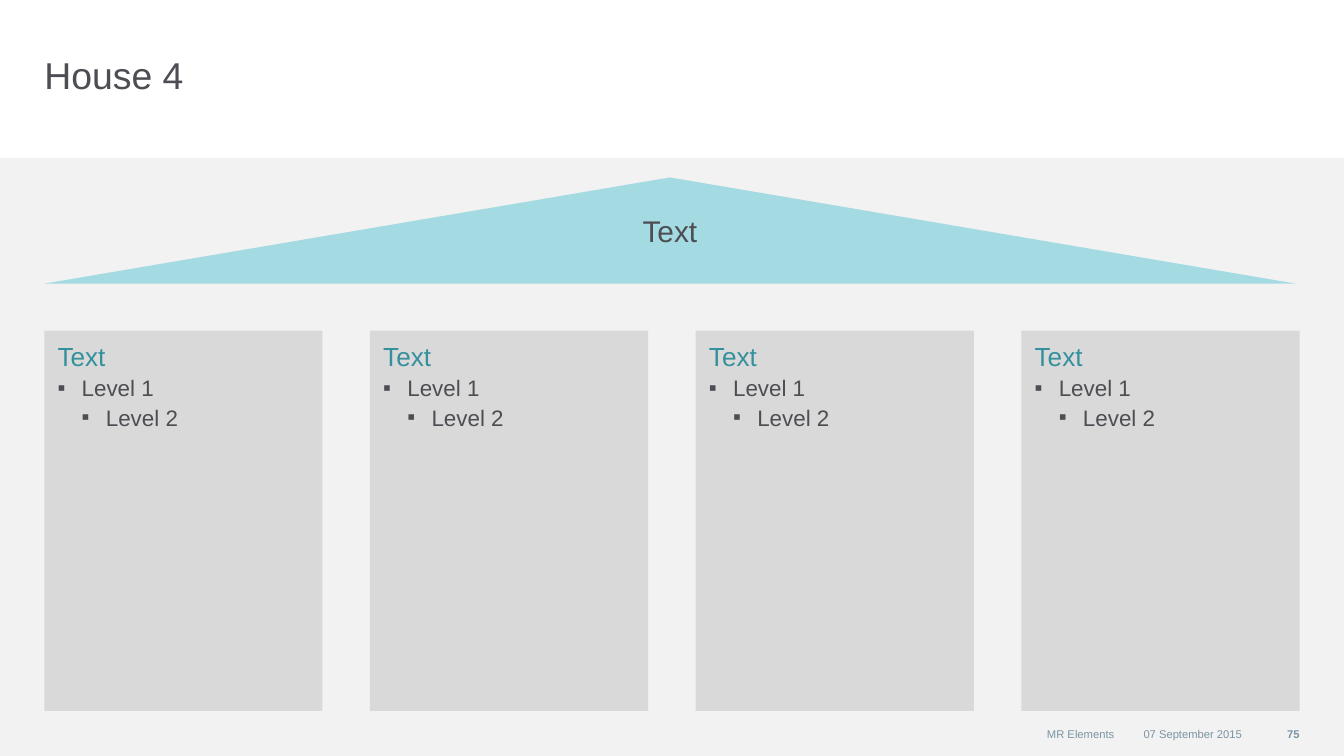
from dataclasses import dataclass

from lxml import etree
from pptx import Presentation
from pptx.dml.color import RGBColor
from pptx.enum.shapes import MSO_SHAPE
from pptx.enum.text import MSO_ANCHOR, PP_ALIGN
from pptx.oxml.ns import qn
from pptx.util import Inches, Pt

RECTANGLE = MSO_SHAPE.RECTANGLE
TOP, MIDDLE = MSO_ANCHOR.TOP, MSO_ANCHOR.MIDDLE
LEFT, CENTER, RIGHT = PP_ALIGN.LEFT, PP_ALIGN.CENTER, PP_ALIGN.RIGHT


@dataclass(frozen=True)
class Theme:
    font: str = "Arial"
    text: str = "4D4E53"
    heading: str = "34909C"
    footer: str = "7A94A3"
    backdrop: str = "F2F2F2"
    pillar: str = "D9D9D9"
    roof: str = "A4DAE1"
    title_size: int = 20
    roof_size: int = 16
    heading_size: int = 14
    body_size: int = 12
    footer_size: int = 6


THEME = Theme()
SLIDE_WIDTH = 10
SLIDE_HEIGHT = SLIDE_WIDTH * 9 / 16
MARGIN = 0.33
BULLET_STEP = 0.18


def paint(shape, color):
    shape.shadow.inherit = False
    shape.fill.solid()
    shape.fill.fore_color.rgb = RGBColor.from_string(color)
    shape.line.fill.background()


def add_rectangle(slide, box, color):
    rectangle = slide.shapes.add_shape(RECTANGLE, *map(Inches, box))
    paint(rectangle, color)
    return rectangle


def setup_frame(frame, anchor, inset_x=0.1, inset_y=0.05):
    frame.word_wrap = True
    frame.vertical_anchor = anchor
    frame.margin_left = frame.margin_right = Inches(inset_x)
    frame.margin_top = frame.margin_bottom = Inches(inset_y)


def write(paragraph, words, size, color, align=LEFT, bold=False):
    paragraph.alignment = align
    run = paragraph.add_run()
    run.text = words
    run.font.name = THEME.font
    run.font.size = Pt(size)
    run.font.bold = bold
    run.font.color.rgb = RGBColor.from_string(color)


def add_bullet(paragraph, level):
    properties = paragraph._p.get_or_add_pPr()
    properties.set("marL", str(Inches(BULLET_STEP * level)))
    properties.set("indent", str(-Inches(BULLET_STEP)))
    etree.SubElement(properties, qn("a:buFont")).set("typeface", THEME.font)
    etree.SubElement(properties, qn("a:buChar")).set("char", "▪")


def add_label(slide, box, words, size, color, anchor=TOP, align=LEFT, bold=False):
    label = slide.shapes.add_textbox(*map(Inches, box))
    setup_frame(label.text_frame, anchor, 0, 0)
    write(label.text_frame.paragraphs[0], words, size, color, align, bold)


def add_roof(slide, box, words):
    left, top, width, height = box
    base = top + height
    builder = slide.shapes.build_freeform(Inches(left), Inches(base))
    corners = [(left + width, base), (left + width / 2, top)]
    builder.add_line_segments([(Inches(x), Inches(y)) for x, y in corners], close=True)
    roof = builder.convert_to_shape()
    paint(roof, THEME.roof)
    setup_frame(roof.text_frame, MIDDLE)
    write(roof.text_frame.paragraphs[0], words, THEME.roof_size, THEME.text, CENTER)


def add_pillar(slide, box, heading, levels):
    frame = add_rectangle(slide, box, THEME.pillar).text_frame
    setup_frame(frame, TOP)
    first = frame.paragraphs[0]
    first.line_spacing = 1.1
    write(first, heading, THEME.heading_size, THEME.heading)
    for level, words in enumerate(levels, start=1):
        item = frame.add_paragraph()
        item.line_spacing = 1.1
        add_bullet(item, level)
        write(item, words, THEME.body_size, THEME.text)


def add_pillars(slide, box, pillars, pillar_width):
    left, top, width, height = box
    pitch = (width - pillar_width) / (len(pillars) - 1)
    for index, (heading, levels) in enumerate(pillars):
        pillar_box = (left + index * pitch, top, pillar_width, height)
        add_pillar(slide, pillar_box, heading, levels)


def add_footer(slide, box):
    left, top, width, height = box
    # Each entry: offset, width, words, bold
    entries = [
        (0, 3.94, "MR Elements", False),
        (3.98, 0.91, "07 September 2015", False),
        (width - 0.43, 0.43, "75", True),
    ]
    for offset, entry_width, words, bold in entries:
        add_label(slide, (left + offset, top, entry_width, height), words,
                  THEME.footer_size, THEME.footer, MIDDLE, RIGHT, bold)


def main():
    deck = Presentation()
    deck.slide_width, deck.slide_height = Inches(SLIDE_WIDTH), Inches(SLIDE_HEIGHT)
    slide = deck.slides.add_slide(deck.slide_layouts[6])

    # Backdrop and title
    backdrop_height = 4.45
    add_rectangle(slide, (0, SLIDE_HEIGHT - backdrop_height, SLIDE_WIDTH, backdrop_height),
                  THEME.backdrop)
    add_label(slide, (MARGIN, 0.39, 7.48, 0.61), "House 4", THEME.title_size, THEME.text)

    # House: pillars under a roof
    pillars = [("Text", ("Level 1", "Level 2"))] * 4
    add_pillars(slide, (MARGIN, 2.46, SLIDE_WIDTH - 2 * MARGIN, 2.83), pillars, 2.07)
    add_roof(slide, (MARGIN, 1.32, 9.31, 0.79), "Text")

    # Footer
    add_footer(slide, (4.35, 5.35, 5.32, 0.22))

    deck.save("out.pptx")


if __name__ == "__main__":
    main()
